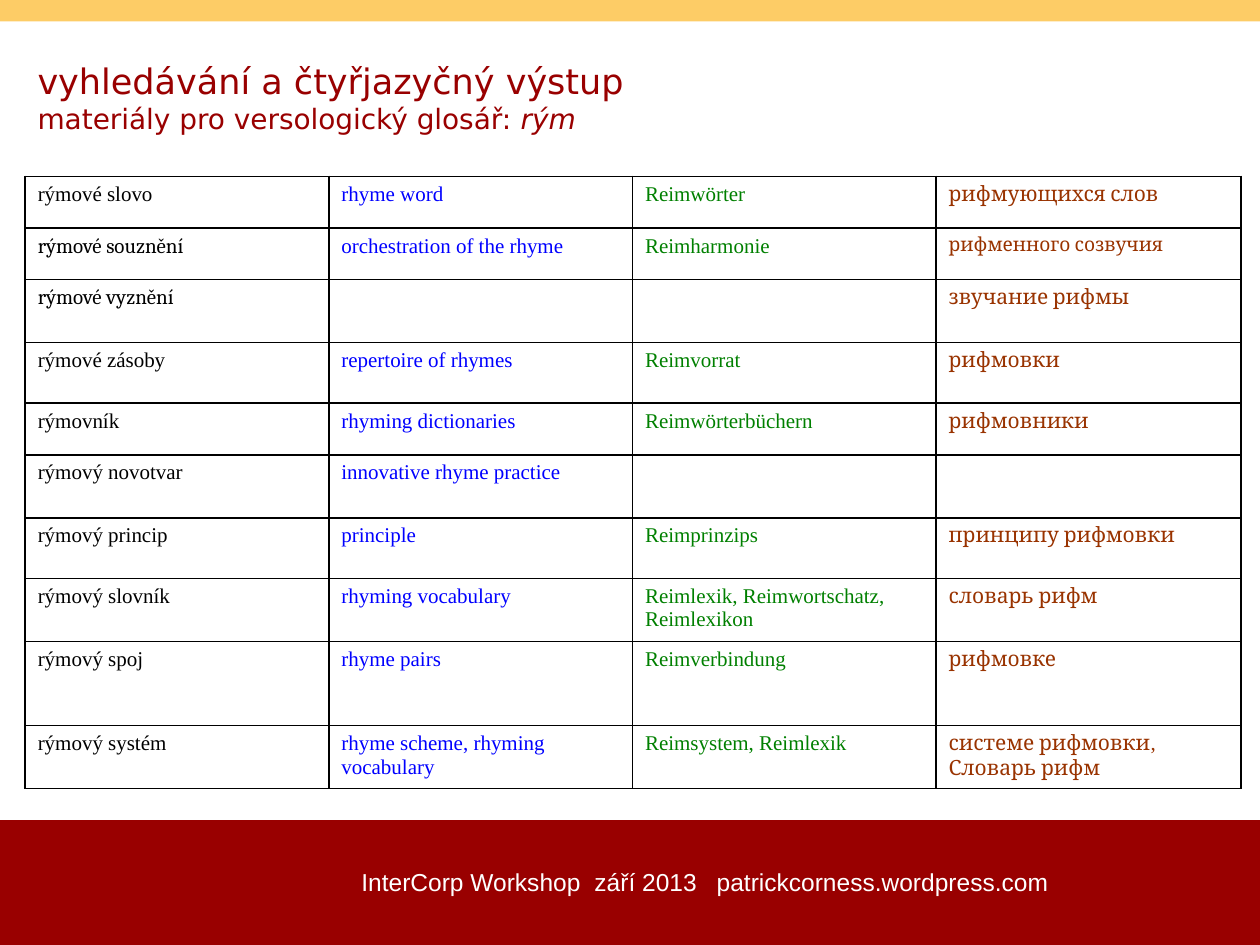
from lxml.etree import SubElement
from pptx import Presentation
from pptx.dml.color import RGBColor as RGB
from pptx.enum.shapes import MSO_SHAPE as SHAPE
from pptx.enum.text import MSO_ANCHOR as ANCHOR
from pptx.oxml.ns import qn
from pptx.util import Inches, Pt

THEME = {
    "red": "990000", "gold": "FDCC66", "white": "FFFFFF", "line": "000000",
    "czech": "000000", "english": "0000FF", "german": "008000", "russian": "993300",
    "title": 20, "subtitle": 16, "footer": 14, "cell": 12, "small": 11,
    "sans": "DejaVu Sans", "footer_font": "Arial",
    "serif": "Times New Roman", "book": "Cambria",
}


def add_run(paragraph, text, size, face, color, italic=False):
    run = paragraph.add_run()
    run.text = text
    look = {"size": Pt(THEME[size]), "name": THEME[face], "italic": italic}
    for key, value in look.items():
        setattr(run.font, key, value)
    run.font.color.rgb = RGB.from_string(THEME[color])


prs = Presentation()
prs.slide_width, prs.slide_height = Inches(10), Inches(7.5)
slide = prs.slides.add_slide(prs.slide_layouts[6])

for top, height, color in [(6.51, 0.99, "red"), (0, 0.17, "gold")]:
    band = slide.shapes.add_shape(SHAPE.RECTANGLE, 0, Inches(top), prs.slide_width, Inches(height))
    band.shadow.inherit = False
    band.fill.solid()
    band.fill.fore_color.rgb = RGB.from_string(THEME[color])
    band.line.fill.background()

footer = slide.shapes.add_textbox(Inches(2.77), Inches(6.83), Inches(5.86), Inches(0.57)).text_frame
footer.word_wrap = True
event = footer.paragraphs[0]
stops = SubElement(event._p.get_or_add_pPr(), qn("a:tabLst"))
for position in (1.85, 2.82):
    SubElement(stops, qn("a:tab"), pos=str(Inches(position)), algn="l")
add_run(event, "InterCorp Workshop\tzáří 2013\tpatrickcorness.wordpress.com",
        "footer", "footer_font", "white")

heading = slide.shapes.add_textbox(Inches(0.2), Inches(0.42), Inches(8.46), Inches(0.71)).text_frame
heading.word_wrap = True
heading.vertical_anchor = ANCHOR.MIDDLE
title = heading.paragraphs[0]
add_run(title, "vyhledávání a čtyřjazyčný výstup", "title", "sans", "red")
title.add_line_break()
add_run(title, "materiály pro versologický glosář: ", "subtitle", "sans", "red")
add_run(title, "rým", "subtitle", "sans", "red", italic=True)

languages = ["czech", "english", "german", "russian"]
glossary = [
    (0.41, "rýmové slovo", "rhyme word", "Reimwörter", "рифмующихся слов"),
    (0.41, "rýmové souznění", "orchestration of the rhyme", "Reimharmonie", "рифменного созвучия"),
    (0.5, "rýmové vyznění", "", "", "звучание рифмы"),
    (0.48, "rýmové zásoby", "repertoire of rhymes", "Reimvorrat", "рифмовки"),
    (0.41, "rýmovník", "rhyming dictionaries", "Reimwörterbüchern", "рифмовники"),
    (0.5, "rýmový novotvar", "innovative rhyme practice", "", ""),
    (0.48, "rýmový princip", "principle", "Reimprinzips", "принципу рифмовки"),
    (0.5, "rýmový slovník", "rhyming vocabulary", "Reimlexik, Reimwortschatz, Reimlexikon",
     "словарь рифм"),
    (0.67, "rýmový spoj", "rhyme pairs", "Reimverbindung", "рифмовке"),
    (0.5, "rýmový systém", "rhyme scheme, rhyming vocabulary", "Reimsystem, Reimlexik",
     "системе рифмовки, Словарь рифм"),
]
book_terms = {"rýmové souznění", "rýmové vyznění"}
small_terms = {"рифменного созвучия"}

table = slide.shapes.add_table(len(glossary), len(languages), Inches(0.2), Inches(1.4),
                               Inches(9.65), Inches(4.86)).table
table.first_row = table.horz_banding = False
for column, width in zip(table.columns, (2.41, 2.41, 2.41, 2.42)):
    column.width = Inches(width)

for r, (height, *terms) in enumerate(glossary):
    table.rows[r].height = Inches(height)
    for c, (language, term) in enumerate(zip(languages, terms)):
        cell = table.cell(r, c)
        borders = cell._tc.get_or_add_tcPr()
        for side in ("lnL", "lnR", "lnT", "lnB"):
            edge = SubElement(borders, qn(f"a:{side}"), w=str(Pt(1)))
            paint = SubElement(edge, qn("a:solidFill"))
            SubElement(paint, qn("a:srgbClr"), val=THEME["line"])
        cell.fill.background()
        if term:
            face = "book" if language == "russian" or term in book_terms else "serif"
            size = "small" if term in small_terms else "cell"
            for piece in term.partition(", ") if language == "russian" else [term]:
                if piece:
                    add_run(cell.text_frame.paragraphs[0], piece, size,
                            "serif" if piece == ", " else face, language)

prs.save("out.pptx")
